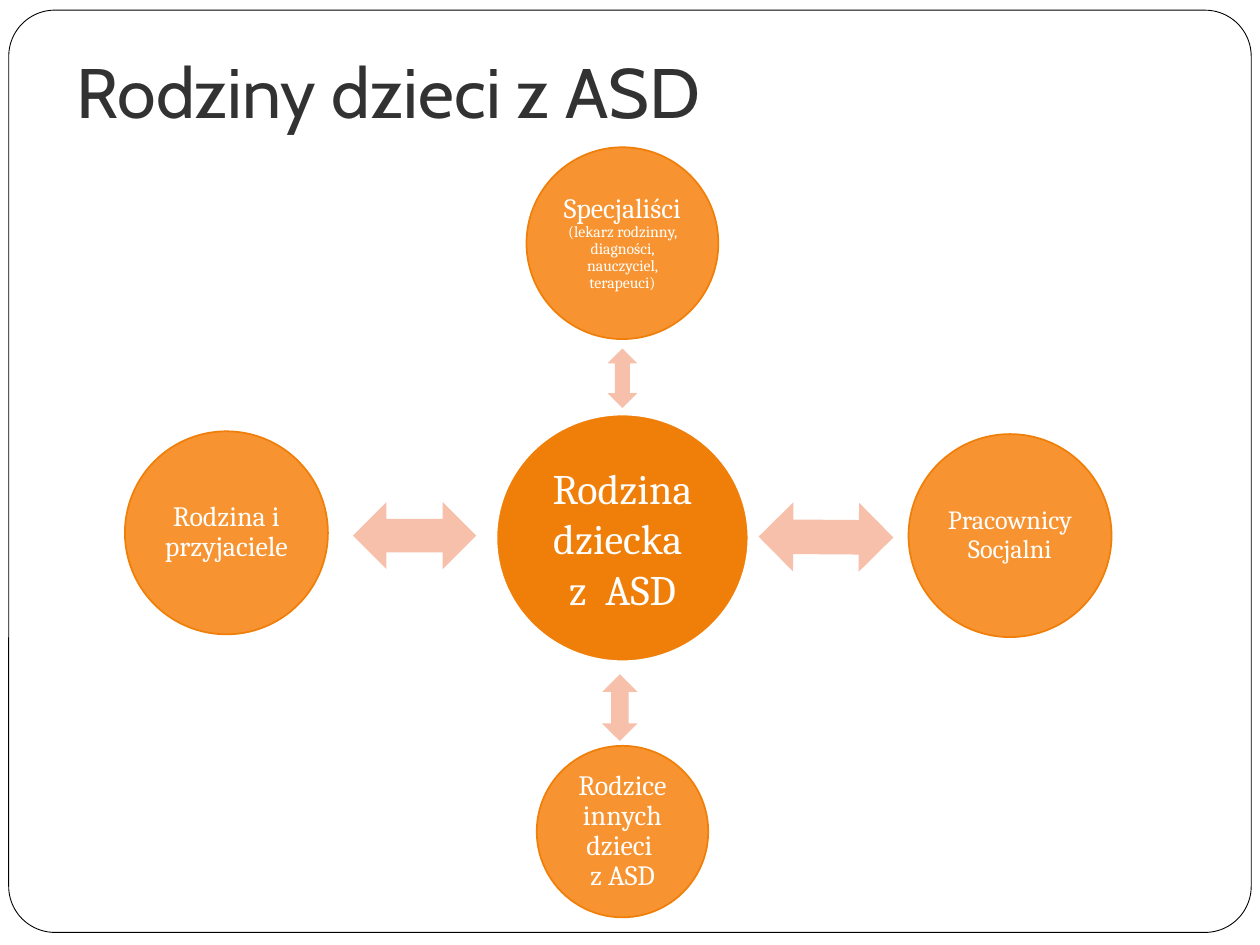
from pptx import Presentation
from pptx import util as u
from pptx.dml.color import RGBColor
from pptx.enum import shapes, text

Pt = u.Pt
WHITE = RGBColor(0xFF, 0xFF, 0xFF)
BLACK = RGBColor(0, 0, 0)
INK = RGBColor(0x32, 0x32, 0x32)
DEEP = RGBColor(0xF0, 0x7F, 0x09)
ORANGE = RGBColor(0xF7, 0x94, 0x31)
PEACH = RGBColor(0xF6, 0xC0, 0xAB)
KIND = shapes.MSO_SHAPE

# Outer circles: centre x, centre y, diameter, runs of (text, size)
NODES = [
    (355.7, 139, 109.6, [("Specjaliści\n", 16),
                         ("(lekarz rodzinny, diagności, nauczyciel, terapeuci)", 9)]),
    (577.2, 306.1, 116, [("Pracownicy Socjalni", 15)]),
    (355.7, 475.2, 98, [("Rodzice innych dzieci \nz ASD", 16)]),
    (129.4, 304.5, 116, [("Rodzina i przyjaciele", 16)]),
]
# Arrows: centre x, centre y, width, length, rotation
ARROWS = [
    (355.7, 216.2, 17, 34, 0),
    (472, 306.9, 39.5, 77, 90.4),
    (354.2, 404.4, 20.2, 38.2, 180),
    (236.9, 306.1, 38.2, 70.4, 270),
]


def add_shape(slide, kind, mid, size, fill, line=None, wide=1):
    """Add a flat shape placed by its centre."""
    (x, y), (w, h) = mid, size
    shape = slide.shapes.add_shape(kind, Pt(x - w / 2), Pt(y - h / 2), Pt(w), Pt(h))
    shape.shadow.inherit = False
    shape.fill.solid()
    shape.fill.fore_color.rgb = fill
    if line is None:
        shape.line.fill.background()
    else:
        shape.line.color.rgb = line
        shape.line.width = Pt(wide)
    return shape


def add_run(para, words, size, font="Cambria", color=WHITE):
    """Add a run; a newline in the words becomes a line break."""
    for i, part in enumerate(words.split("\n")):
        if i:
            para.add_line_break()
        if part:
            run = para.add_run()
            run.text = part
            run.font.size = Pt(size)
            run.font.name = font
            run.font.color.rgb = color


def set_frame(frame, left, top, right, low, anchor):
    frame.word_wrap = True
    frame.auto_size = text.MSO_AUTO_SIZE.NONE
    frame.margin_left, frame.margin_top = Pt(left), Pt(top)
    frame.margin_right, frame.margin_bottom = Pt(right), Pt(low)
    frame.vertical_anchor = anchor


def add_disc(slide, mid, size, fill, line, paras, inset, space=None):
    """Add a circle with centred text."""
    disc = add_shape(slide, KIND.OVAL, mid, size, fill, line)
    frame = disc.text_frame
    set_frame(frame, *[inset] * 4, text.MSO_ANCHOR.MIDDLE)
    for i, runs in enumerate(paras):
        para = frame.add_paragraph() if i else frame.paragraphs[0]
        para.alignment = text.PP_ALIGN.CENTER
        if space:
            para.line_spacing = space
        for words, points in runs:
            add_run(para, words, points)


def add_border(slide):
    border = add_shape(slide, KIND.ROUNDED_RECTANGLE, (360, 269.3), (710, 527),
                       WHITE, BLACK, 0.5)
    border.adjustments[0] = 0.05
    # Send behind the title
    slide.shapes._spTree.insert(2, border._element)


def set_title(slide, words):
    title = slide.shapes.title
    title.left, title.top, title.width, title.height = Pt(36.7), Pt(0), Pt(644.4), Pt(82.8)
    set_frame(title.text_frame, 7.2, 3.6, 7.2, 7.2, text.MSO_ANCHOR.BOTTOM)
    para = title.text_frame.paragraphs[0]
    para.alignment = text.PP_ALIGN.LEFT
    add_run(para, words, 40, "Cabin", INK)


def main():
    prs = Presentation()
    prs.slide_width, prs.slide_height = Pt(720), Pt(540)
    slide = prs.slides.add_slide(prs.slide_layouts[5])

    # Frame and title
    add_border(slide)
    set_title(slide, "Rodziny dzieci z ASD")

    # Family in the middle
    add_disc(slide, (355.7, 307.4), (144, 141), DEEP, WHITE,
             [[("Rodzina dziecka ", 24)], [("z  ASD", 24)]], 2.2)

    # Support around it
    for x, y, wide, high, turn in ARROWS:
        arrow = add_shape(slide, KIND.UP_DOWN_ARROW, (x, y), (wide, high), PEACH)
        arrow.rotation = turn
    for x, y, size, runs in NODES:
        add_disc(slide, (x, y), (size, size), ORANGE, DEEP, [runs], 1.5, 0.9)

    prs.save("out.pptx")


if __name__ == "__main__":
    main()
